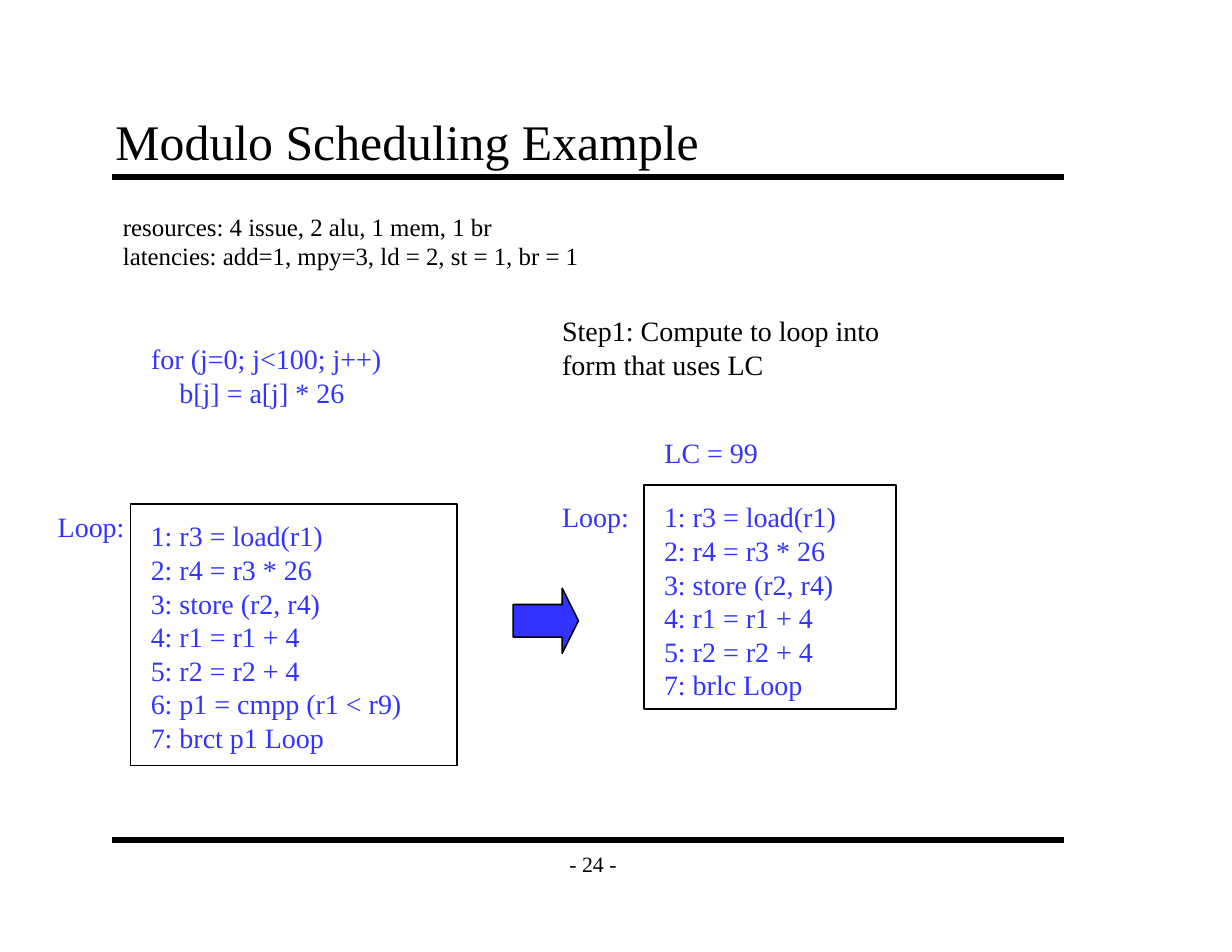
from dataclasses import dataclass

from lxml import etree
from pptx import Presentation
from pptx.dml.color import RGBColor
from pptx.enum.shapes import MSO_CONNECTOR, MSO_SHAPE
from pptx.enum.text import MSO_ANCHOR, PP_ALIGN
from pptx.oxml.ns import qn
from pptx.util import Cm, Pt

LINE = MSO_CONNECTOR.STRAIGHT
RECT = MSO_SHAPE.RECTANGLE
ARROW = MSO_SHAPE.RIGHT_ARROW
TOP, MIDDLE, BOTTOM = MSO_ANCHOR.TOP, MSO_ANCHOR.MIDDLE, MSO_ANCHOR.BOTTOM
LEFT, CENTER = PP_ALIGN.LEFT, PP_ALIGN.CENTER


@dataclass(frozen=True)
class Theme:
    font: str = "Times New Roman"
    ink: RGBColor = RGBColor(0x00, 0x00, 0x00)
    code: RGBColor = RGBColor(0x33, 0x33, 0xFF)
    title: Pt = Pt(32)
    body: Pt = Pt(18)
    note: Pt = Pt(16)
    foot: Pt = Pt(14)
    rule: Pt = Pt(4)
    edge: Pt = Pt(1)


THEME = Theme()
BODY = ["1: r3 = load(r1)", "2: r4 = r3 * 26", "3: store (r2, r4)",
        "4: r1 = r1 + 4", "5: r2 = r2 + 4"]


def add_text(slide, box, lines, size=THEME.body, color=THEME.code,
             anchor=TOP, align=LEFT, wrap=False, pad=(0.25, 0.13)):
    """Add one paragraph per line; box and pad are in cm."""
    frame = slide.shapes.add_textbox(*map(Cm, box)).text_frame
    frame.word_wrap = wrap
    frame.vertical_anchor = anchor
    frame.margin_left = frame.margin_right = Cm(pad[0])
    frame.margin_top = frame.margin_bottom = Cm(pad[1])
    for i, line in enumerate(lines):
        para = frame.add_paragraph() if i else frame.paragraphs[0]
        para.alignment = align
        run = para.add_run()
        run.text = line
        run.font.name = THEME.font
        run.font.size = size
        run.font.color.rgb = color
    return frame


def add_rule(slide, y):
    rule = slide.shapes.add_connector(LINE, Cm(2.54), Cm(y), Cm(24.13), Cm(y))
    rule.line.color.rgb = THEME.ink
    rule.line.width = THEME.rule
    etree.SubElement(rule._element.spPr, qn("a:effectLst"))


def add_block(slide, kind, box, fill=None):
    """Add an outlined shape, hollow unless a fill is given."""
    block = slide.shapes.add_shape(kind, *map(Cm, box))
    block.shadow.inherit = False
    block.line.color.rgb = THEME.ink
    block.line.width = THEME.edge
    if fill is None:
        block.fill.background()
    else:
        block.fill.solid()
        block.fill.fore_color.rgb = fill
    return block


def add_loop(slide, x, y, size, text, tag, lines):
    """Add a framed listing at x, y with its label at tag."""
    add_text(slide, (x + 0.21, y + 0.21, *text), lines)
    add_block(slide, RECT, (x, y, *size))
    add_text(slide, (*tag, 2.03, 1.02), ["Loop:"])


def main():
    deck = Presentation()
    deck.slide_width, deck.slide_height = Cm(27.94), Cm(21.59)
    slide = deck.slides.add_slide(deck.slide_layouts[6])

    for y in (4.02, 19.05):
        add_rule(slide, y)
    add_text(slide, (12.5, 19.05, 1.9, 1.06), ["- 24 -"], THEME.foot,
             THEME.ink, MIDDLE, CENTER, pad=(0.28, 0.15))
    add_text(slide, (2.34, 2.33, 21.59, 1.69), ["Modulo Scheduling Example"],
             THEME.title, THEME.ink, BOTTOM, wrap=True, pad=(0.28, 0.15))

    add_text(slide, (2.54, 4.66, 10.87, 1.63),
             ["resources: 4 issue, 2 alu, 1 mem, 1 br",
              "latencies: add=1, mpy=3, ld = 2, st = 1, br = 1"],
             THEME.note, THEME.ink)
    source = add_text(slide, (3.18, 7.62, 5.74, 1.78),
                      ["for (j=0; j<100; j++)", "b[j] = a[j] * 26"])
    inner = source.paragraphs[1]._p.get_or_add_pPr()
    inner.set("marL", str(Cm(0.64)))
    add_text(slide, (12.5, 6.99, 7.7, 1.78),
             ["Step1: Compute to loop into", "form that uses LC"],
             color=THEME.ink)
    add_text(slide, (14.82, 9.74, 2.64, 1.02), ["LC = 99"])

    add_loop(slide, 2.96, 11.43, (7.41, 5.93), (6.2, 5.59), (1.06, 11.43),
             BODY + ["6: p1 = cmpp (r1 < r9)", "7: brct p1 Loop"])
    add_loop(slide, 14.6, 11, (5.72, 5.08), (4.42, 4.83), (12.5, 11.21),
             BODY + ["7: brlc Loop"])
    arrow = add_block(slide, ARROW, (11.64, 13.34, 1.48, 1.48), THEME.code)
    arrow.adjustments[0] = 0.5
    arrow.adjustments[1] = 0.25

    deck.save("out.pptx")


if __name__ == "__main__":
    main()
